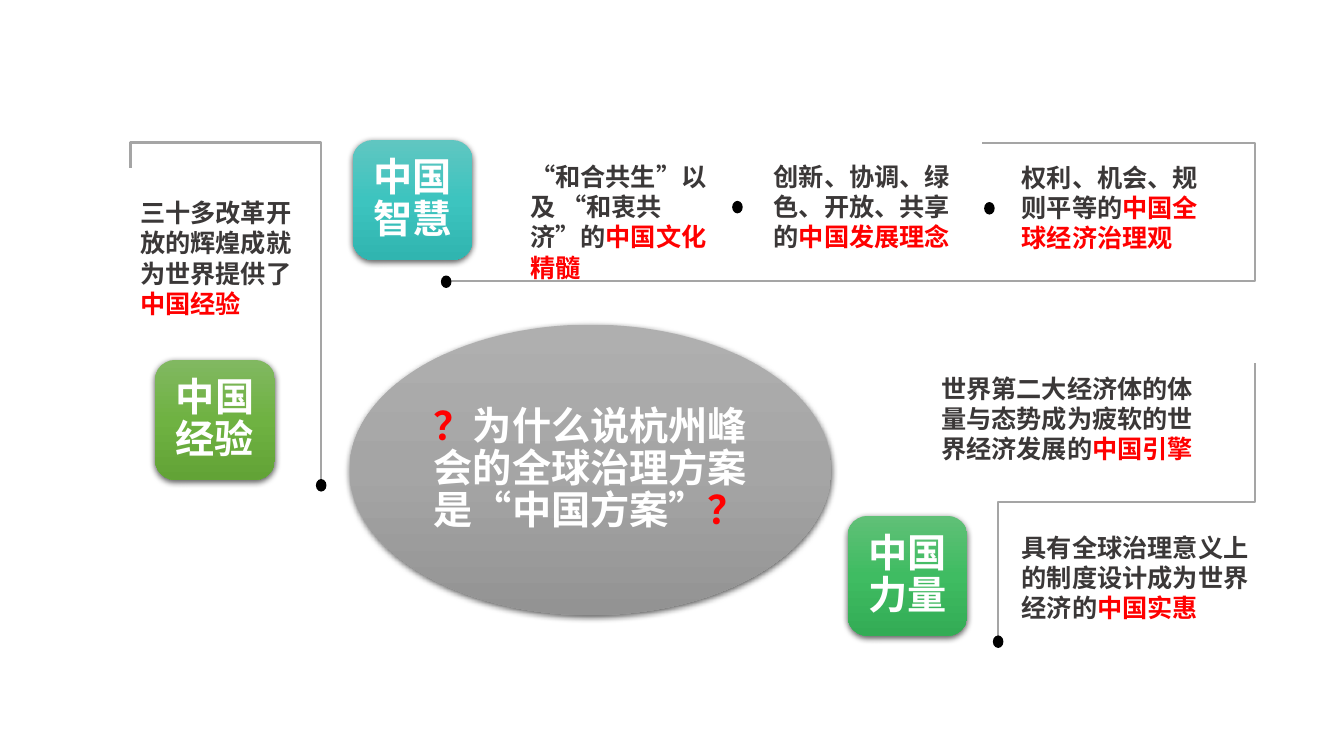
from dataclasses import dataclass

from lxml.etree import SubElement
from pptx import Presentation
from pptx.dml.color import RGBColor as RGB
from pptx.enum.shapes import MSO_CONNECTOR as CONN, MSO_SHAPE as SHAPE
from pptx.enum.text import MSO_ANCHOR as ANCHOR, MSO_AUTO_SIZE as AUTO, PP_ALIGN as ALIGN
from pptx.oxml import parse_xml
from pptx.oxml.ns import nsdecls, qn
from pptx.util import Cm, Pt


@dataclass(frozen=True)
class Theme:
    font: str = "Noto Sans CJK SC"
    title: int = 28
    body: int = 18
    white: str = "FFFFFF"
    dark: str = "3B3838"
    accent: str = "FF0000"
    dot: str = "000000"
    line: str = "A5A5A5"
    gray: tuple = ("AFAFAF", "A5A5A5", "939393")
    teal: tuple = ("60C6C1", "3DC4BF", "30B5B0")
    green: tuple = ("60C077", "3FBC62", "33AC55")
    olive: tuple = ("81B861", "6FB242", "62A336")


def apply(obj, values):
    for name, value in values.items():
        setattr(obj, name, value)


class Board:
    def __init__(self, slide, theme):
        self.slide, self.theme = slide, theme

    def add_text(self, tf, text, size, color, **para):
        t = self.theme
        for i, line in enumerate(text.split("\n")):
            p = tf.add_paragraph() if i else tf.paragraphs[0]
            apply(p, para)
            for j, part in enumerate(line.split("*")):
                if not part:
                    continue
                r = p.add_run()
                r.text = part
                apply(r.font, {"size": Pt(size), "bold": True, "name": t.font})
                r.font.color.rgb = RGB.from_string(t.accent if j % 2 else color)
                SubElement(r._r.get_or_add_rPr(), qn("a:ea")).set("typeface", t.font)

    def badge(self, kind, x, y, w, h, colors, text):
        s = self.slide.shapes.add_shape(kind, Cm(x), Cm(y), Cm(w), Cm(h))
        s.line.fill.background()
        s.fill.background()
        stops = "".join(
            f'<a:gs pos="{i * 50000}"><a:srgbClr val="{c}"/></a:gs>'
            for i, c in enumerate(colors))
        sp = s._element.spPr
        sp.replace(sp.find(qn("a:noFill")), parse_xml(
            f'<a:gradFill {nsdecls("a")}><a:gsLst>{stops}</a:gsLst>'
            '<a:lin ang="5400000" scaled="0"/></a:gradFill>'))
        sp.append(parse_xml(
            f'<a:effectLst {nsdecls("a")}><a:outerShdw blurRad="{Pt(4.5)}" '
            f'dist="{Pt(1.5)}" dir="5400000" algn="ctr" rotWithShape="0">'
            '<a:srgbClr val="000000"><a:alpha val="63000"/></a:srgbClr>'
            '</a:outerShdw></a:effectLst>'))
        tf = s.text_frame
        apply(tf, {"word_wrap": True, "vertical_anchor": ANCHOR.MIDDLE})
        apply(tf, {f"margin_{k}": Cm(0.2) for k in ("left", "right", "top", "bottom")})
        self.add_text(tf, text, self.theme.title, self.theme.white,
                      alignment=ALIGN.CENTER, line_spacing=0.9)

    def caption(self, x, y, w, h, text):
        tf = self.slide.shapes.add_textbox(Cm(x), Cm(y), Cm(w), Cm(h)).text_frame
        apply(tf, {"word_wrap": True, "auto_size": AUTO.SHAPE_TO_FIT_TEXT})
        self.add_text(tf, text, self.theme.body, self.theme.dark)

    def elbow(self, x1, y1, x2, y2, rot, bend):
        s = self.slide.shapes.add_connector(CONN.ELBOW, Cm(x1), Cm(y1), Cm(x2), Cm(y2))
        s.line.color.rgb = RGB.from_string(self.theme.line)
        s.line.width = Pt(1.5)
        sp = s._element.spPr
        sp.find(qn("a:xfrm")).set("rot", str(rot * 60000))
        geom = sp.find(qn("a:prstGeom"))
        guides = geom.find(qn("a:avLst"))
        if guides is None:
            guides = SubElement(geom, qn("a:avLst"))
        gd = SubElement(guides, qn("a:gd"))
        gd.set("name", "adj1")
        gd.set("fmla", f"val {round(bend * 100000)}")
        SubElement(sp, qn("a:effectLst"))

    def dot(self, x, y):
        s = self.slide.shapes.add_shape(
            SHAPE.FLOWCHART_CONNECTOR, Cm(x), Cm(y), Cm(0.23), Cm(0.28))
        s.shadow.inherit = False
        s.fill.solid()
        s.fill.fore_color.rgb = s.line.color.rgb = RGB.from_string(self.theme.dot)
        s.line.width = Pt(1)


def main():
    prs = Presentation()
    apply(prs, {"slide_width": Cm(33.87), "slide_height": Cm(19.05)})
    theme = Theme()
    board = Board(prs.slides.add_slide(prs.slide_layouts[6]), theme)

    board.badge(SHAPE.OVAL, 8.81, 8.18, 12.14, 7.32, theme.gray,
                "*？*为什么说杭州峰会的全球治理方案是“中国方案”*？")
    for x, y, colors, text in (
        (8.89, 3.53, theme.teal, "中国智慧"),
        (21.36, 13, theme.green, "中国力量"),
        (3.91, 9.07, theme.olive, "中国经验"),
    ):
        board.badge(SHAPE.ROUNDED_RECTANGLE, x, y, 3.02, 3.02, colors, text)

    for bend in (
        (11.25, 7.09, 24.74, 3.61, 0, 1.51),
        (1.7, 10.62, 9.68, 5.82, 270, 1.08),
        (31.9, 15.9, 24.89, 9.42, 90, 0.5),
    ):
        board.elbow(*bend)

    for x, y, w, h, text in (
        (13.11, 3.94, 5.31, 2.57, "“和合共生”以及 “和衷共济”的*中国文化精髓"),
        (19.25, 3.94, 5.56, 2.57, "创新、协调、绿色、开放、共享的*中国发展理念"),
        (25.5, 3.96, 5.49, 2.57, "权利、机会、规则平等的*中国全球经济治理观"),
        (23.47, 9.27, 6.93, 2.57, "世界第二大经济体的体量与态势成为疲软的世界经济发展的*中国引擎"),
        (3.28, 4.85, 4.5, 3.33, "三十多改革开放的辉煌成就为世界提供了\n*中国经验"),
        (25.5, 13.28, 6.27, 2.57, "具有全球治理意义上的制度设计成为世界经济的*中国实惠"),
    ):
        board.caption(x, y, w, h, text)

    for x, y in ((11.13, 6.96), (7.98, 12.09), (25.04, 16.03), (18.47, 5.08), (24.82, 5.11)):
        board.dot(x, y)

    prs.save("out.pptx")


if __name__ == "__main__":
    main()
